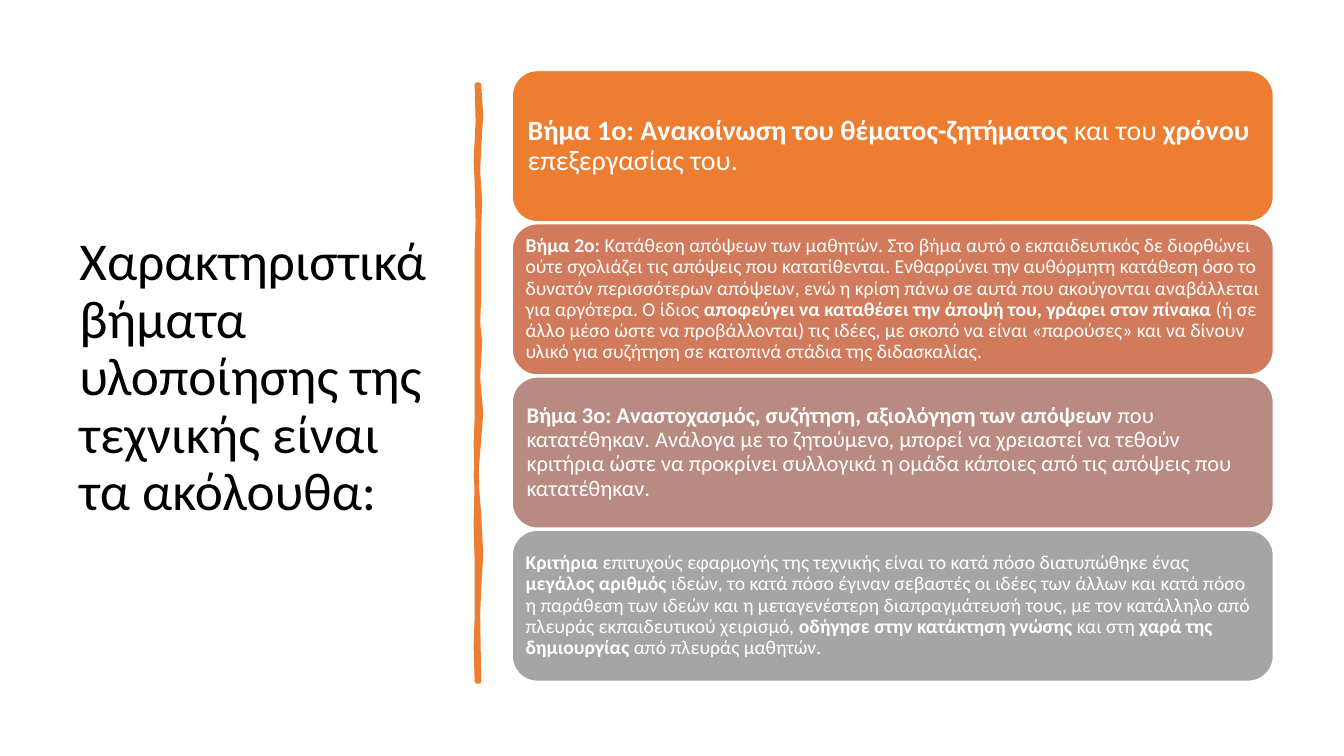
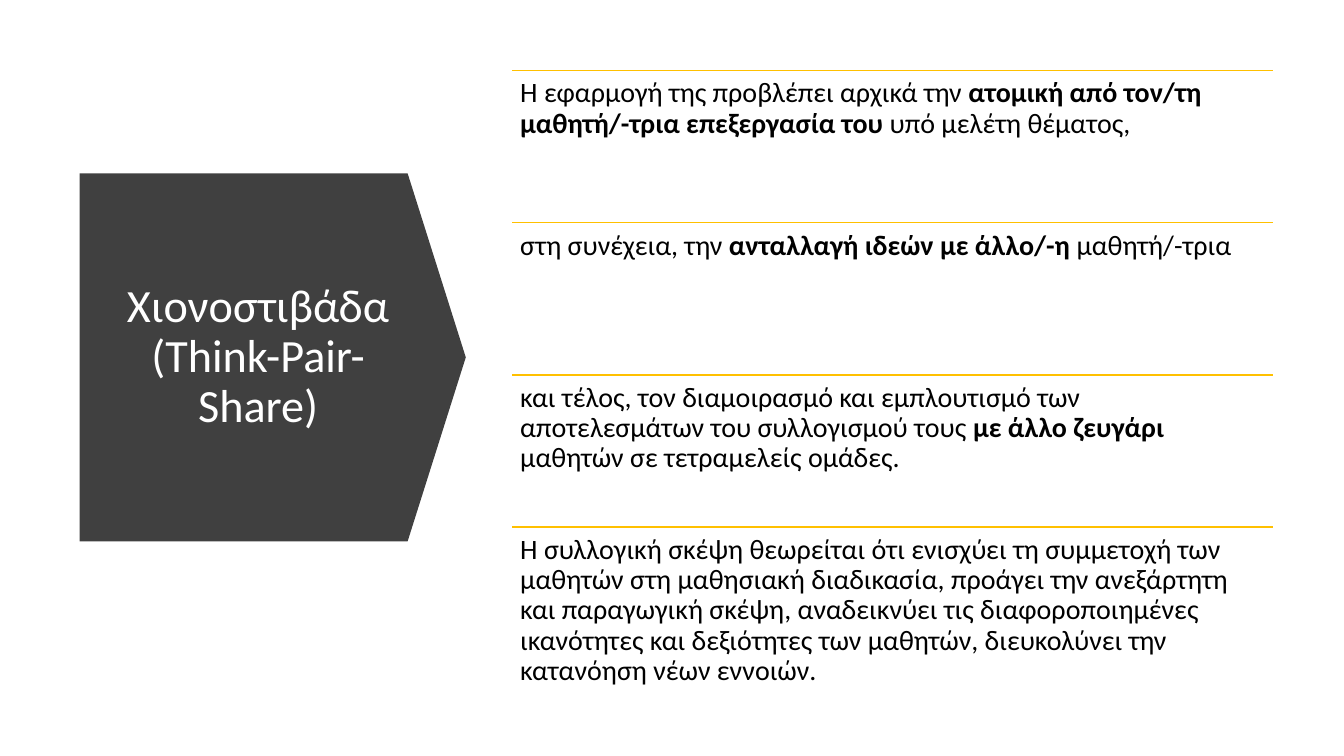
from lxml import etree
from pptx import Presentation
from pptx.dml.color import RGBColor
from pptx.enum.shapes import MSO_CONNECTOR, MSO_SHAPE
from pptx.enum.text import MSO_ANCHOR, PP_ALIGN
from pptx.oxml.ns import qn
from pptx.util import Inches, Pt

STRAIGHT = MSO_CONNECTOR.STRAIGHT
ROUNDED = MSO_SHAPE.ROUNDED_RECTANGLE
PENTAGON = MSO_SHAPE.PENTAGON
TOP, MIDDLE = MSO_ANCHOR.TOP, MSO_ANCHOR.MIDDLE
LEFT, CENTER = PP_ALIGN.LEFT, PP_ALIGN.CENTER

FONT = "Calibri"
COLORS = {
    "black": "000000",
    "white": "FFFFFF",
    "orange": "ED7D31",
    "terracotta": "D17B5C",
    "rose": "B98A82",
    "gray": "A5A5A5",
    "charcoal": "404040",
    "gold": "FFC000",
}

# Right-hand column shared by both slides
COLUMN_LEFT, COLUMN_TOP, COLUMN_WIDTH = 5.08, 0.7, 7.55
CARD_HEIGHT, CARD_GAP = 1.5, 0.02
ROW_HEIGHT = 1.51

# Outline of the hand-drawn divider: down its right edge, up its left edge
DIVIDER_OUTLINE = [
    (4.75, 0.84), (4.77, 1.15), (4.75, 1.46), (4.74, 1.7), (4.76, 2.0), (4.75, 2.26),
    (4.75, 2.94), (4.74, 3.2), (4.76, 3.4), (4.75, 3.56), (4.74, 3.75), (4.77, 4.1),
    (4.75, 4.36), (4.72, 4.72), (4.75, 5.1), (4.77, 5.5), (4.75, 5.84), (4.74, 6.1),
    (4.75, 6.76),
    (4.73, 6.76), (4.72, 6.4), (4.73, 6.13), (4.73, 5.57), (4.72, 5.2), (4.73, 4.77),
    (4.72, 4.4), (4.73, 4.15), (4.73, 3.35), (4.73, 2.5), (4.74, 2.2), (4.73, 1.81),
    (4.72, 1.6), (4.74, 1.2), (4.73, 0.84),
]

# Text between ** marks is bold
STEPS_TITLE = "Χαρακτηριστικά βήματα υλοποίησης της τεχνικής είναι τα ακόλουθα:"
STEP_CARDS = [  # fill, text size, inset, text
    ("orange", 20, 0.08,
     "**Βήμα 1ο: Ανακοίνωση του θέματος-ζητήματος **και του **χρόνου** επεξεργασίας του."),
    ("terracotta", 14, 0.06,
     "**Βήμα 2ο: **Κατάθεση απόψεων των μαθητών. Στο βήμα αυτό ο εκπαιδευτικός δε διορθώνει "
     "ούτε σχολιάζει τις απόψεις που κατατίθενται. Ενθαρρύνει την αυθόρμητη κατάθεση όσο το "
     "δυνατόν περισσότερων απόψεων, ενώ η κρίση πάνω σε αυτά που ακούγονται αναβάλλεται για "
     "αργότερα. Ο ίδιος **αποφεύγει να καταθέσει την άποψή του, γράφει στον πίνακα **(ή σε "
     "άλλο μέσο ώστε να προβάλλονται) τις ιδέες, με σκοπό να είναι «παρούσες» και να δίνουν "
     "υλικό για συζήτηση σε κατοπινά στάδια της διδασκαλίας."),
    ("rose", 16, 0.07,
     "**Βήμα 3ο: Αναστοχασμός, συζήτηση, αξιολόγηση των απόψεων **που κατατέθηκαν. Ανάλογα με "
     "το ζητούμενο, μπορεί να χρειαστεί να τεθούν κριτήρια ώστε να προκρίνει συλλογικά η ομάδα "
     "κάποιες από τις απόψεις που κατατέθηκαν."),
    ("gray", 14, 0.06,
     "**Κριτήρια **επιτυχούς εφαρμογής της τεχνικής είναι το κατά πόσο διατυπώθηκε ένας "
     "**μεγάλος αριθμός** ιδεών, το κατά πόσο έγιναν σεβαστές οι ιδέες των άλλων και κατά πόσο "
     "η παράθεση των ιδεών και η μεταγενέστερη διαπραγμάτευσή τους, με τον κατάλληλο από "
     "πλευράς εκπαιδευτικού χειρισμό, **οδήγησε στην κατάκτηση γνώσης **και στη **χαρά της "
     "δημιουργίας** από πλευράς μαθητών."),
]

SNOWBALL_TITLE = "Χιονοστιβάδα (Think-Pair-Share)"
SNOWBALL_ROWS = [
    "Η εφαρμογή της προβλέπει αρχικά την **ατομική από τον/τη μαθητή/-τρια επεξεργασία "
    "του** υπό μελέτη θέματος,",
    "στη συνέχεια, την **ανταλλαγή ιδεών με άλλο/-η** μαθητή/-τρια",
    "και τέλος, τον διαμοιρασμό και εμπλουτισμό των αποτελεσμάτων του συλλογισμού τους "
    "**με άλλο ζευγάρι **μαθητών σε τετραμελείς ομάδες.",
    "Η συλλογική σκέψη θεωρείται ότι ενισχύει τη συμμετοχή των μαθητών στη μαθησιακή "
    "διαδικασία, προάγει την ανεξάρτητη και παραγωγική σκέψη, αναδεικνύει τις "
    "διαφοροποιημένες ικανότητες και δεξιότητες των μαθητών, διευκολύνει την κατανόηση νέων "
    "εννοιών.",
]


def rgb(name):
    return RGBColor.from_string(COLORS[name])


def write_text(shape, text, size, color, inset, anchor=MIDDLE, align=LEFT):
    """Fill the shape with one paragraph; inset is (horizontal, vertical)."""
    frame = shape.text_frame
    frame.word_wrap = True
    frame.vertical_anchor = anchor
    frame.margin_left = frame.margin_right = Inches(inset[0])
    frame.margin_top = frame.margin_bottom = Inches(inset[1])
    paragraph = frame.paragraphs[0]
    paragraph.alignment = align
    paragraph.line_spacing = 0.9
    paragraph.font.name = FONT
    paragraph.font.size = Pt(size)
    paragraph.font.color.rgb = rgb(color)
    for index, part in enumerate(text.split("**")):
        if part:
            run = paragraph.add_run()
            run.text = part
            run.font.bold = index % 2 == 1


def add_text(slide, box, *text_options, **text_layout):
    shape = slide.shapes.add_textbox(*map(Inches, box))
    write_text(shape, *text_options, **text_layout)


def paint(shape, fill, line=None, width=1):
    shape.shadow.inherit = False
    shape.fill.solid()
    shape.fill.fore_color.rgb = rgb(fill)
    if line:
        shape.line.color.rgb = rgb(line)
        shape.line.width = Pt(width)
    else:
        shape.line.fill.background()


def add_shape(slide, kind, box, fill, line=None):
    shape = slide.shapes.add_shape(kind, *map(Inches, box))
    paint(shape, fill, line)
    return shape


def add_divider(slide):
    points = [(Inches(x), Inches(y)) for x, y in DIVIDER_OUTLINE]
    builder = slide.shapes.build_freeform(*points[0])
    builder.add_line_segments(points[1:], close=True)
    divider = builder.convert_to_shape()
    paint(divider, "orange", "orange", 3.25)
    etree.SubElement(divider.line._get_or_add_ln(), qn("a:round"))


def add_rule(slide, top):
    rule = slide.shapes.add_connector(
        STRAIGHT, Inches(COLUMN_LEFT), Inches(top),
        Inches(COLUMN_LEFT + COLUMN_WIDTH), Inches(top))
    rule.line.color.rgb = rgb("gold")
    rule.line.width = Pt(1)
    etree.SubElement(rule._element.spPr, qn("a:effectLst"))


def build_steps(slide):
    add_text(slide, (0.69, 0.7, 3.74, 6.11), STEPS_TITLE, 38, "black", (0.1, 0.05))
    add_divider(slide)
    for index, (fill, size, inset, text) in enumerate(STEP_CARDS):
        top = COLUMN_TOP + index * (CARD_HEIGHT + CARD_GAP)
        card = add_shape(slide, ROUNDED, (COLUMN_LEFT, top, COLUMN_WIDTH, CARD_HEIGHT),
                         fill, "white")
        write_text(card, text, size, "white", (inset, inset))


def build_snowball(slide):
    arrow = add_shape(slide, PENTAGON, (0.79, 1.72, 3.83, 3.65), "charcoal")
    arrow.adjustments[0] = 0.158
    write_text(arrow, SNOWBALL_TITLE, 33, "white", (0.42, 0.05), align=CENTER)
    for index, text in enumerate(SNOWBALL_ROWS):
        top = COLUMN_TOP + index * ROW_HEIGHT
        add_rule(slide, top)
        add_text(slide, (COLUMN_LEFT, top, COLUMN_WIDTH, ROW_HEIGHT),
                 text, 20, "black", (0.08, 0.08), anchor=TOP)


def main():
    presentation = Presentation()
    presentation.slide_width = Inches(13.33)
    presentation.slide_height = Inches(7.5)
    blank = presentation.slide_layouts[6]
    for build in (build_steps, build_snowball):
        build(presentation.slides.add_slide(blank))
    presentation.save("out.pptx")


if __name__ == "__main__":
    main()
